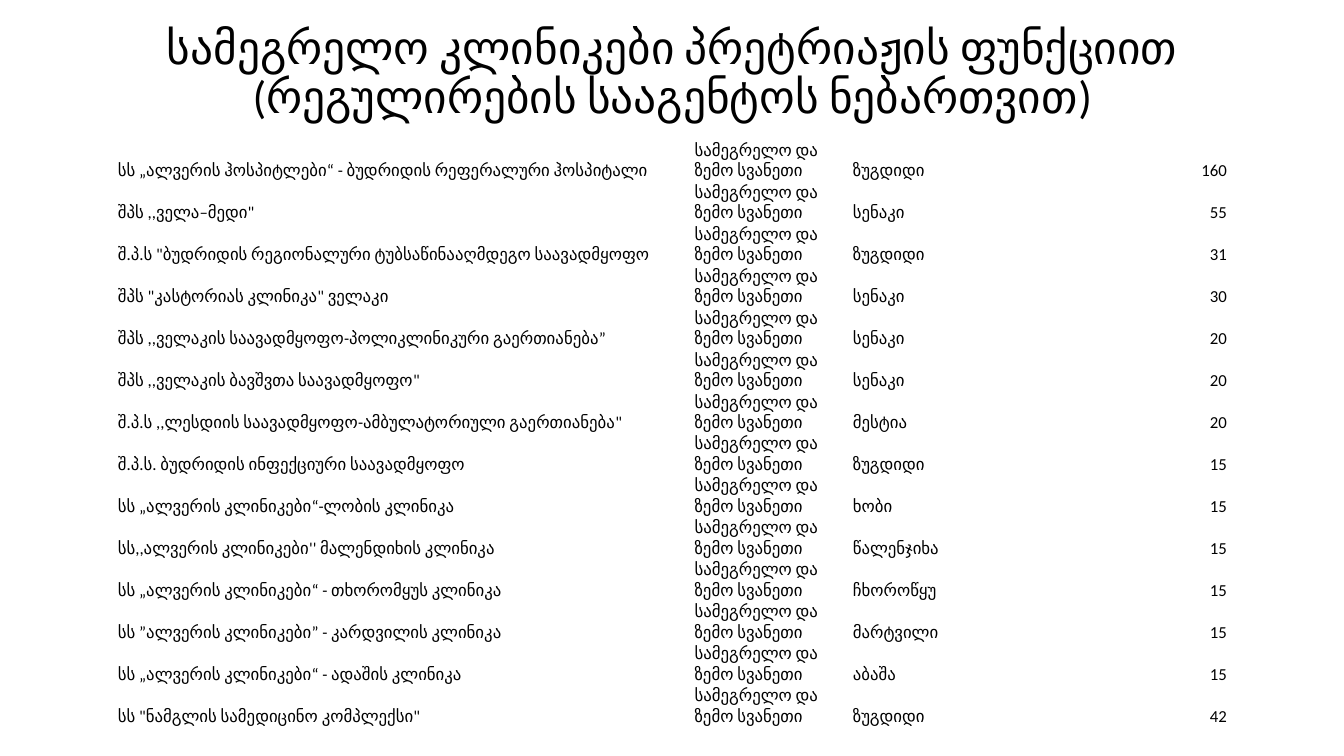
import pptx
import pptx.util
import pptx.dml.color
import pptx.enum.text
from pptx.util import Inches

COLORS = {"text": "000000", "background": "FFFFFF"}
FONT = "Calibri"
ALIGN = pptx.enum.text.PP_ALIGN
ANCHOR = pptx.enum.text.MSO_ANCHOR

TITLE = "სამეგრელო კლინიკები პრეტრიაჟის ფუნქციით (რეგულირების სააგენტოს ნებართვით)"
REGION = "სამეგრელო და ზემო სვანეთი"

# Clinic, town, number of beds
CLINICS = [
    ("სს „ალვერის ჰოსპიტლები“ - ბუდრიდის რეფერალური ჰოსპიტალი", "ზუგდიდი", 160),
    ("შპს ,,ველა–მედი\"", "სენაკი", 55),
    ("შ.პ.ს \"ბუდრიდის რეგიონალური ტუბსაწინააღმდეგო საავადმყოფო", "ზუგდიდი", 31),
    ("შპს \"კასტორიას კლინიკა\" ველაკი", "სენაკი", 30),
    ("შპს ,,ველაკის საავადმყოფო-პოლიკლინიკური გაერთიანება”", "სენაკი", 20),
    ("შპს ,,ველაკის ბავშვთა საავადმყოფო\"", "სენაკი", 20),
    ("შ.პ.ს ,,ლესდიის საავადმყოფო-ამბულატორიული გაერთიანება\"", "მესტია", 20),
    ("შ.პ.ს. ბუდრიდის ინფექციური საავადმყოფო", "ზუგდიდი", 15),
    ("სს „ალვერის კლინიკები“-ლობის კლინიკა", "ხობი", 15),
    ("სს,,ალვერის კლინიკები'' მალენდიხის კლინიკა", "წალენჯიხა", 15),
    ("სს „ალვერის კლინიკები“ - თხორომყუს კლინიკა", "ჩხოროწყუ", 15),
    ("სს ”ალვერის კლინიკები” - კარდვილის კლინიკა", "მარტვილი", 15),
    ("სს „ალვერის კლინიკები“ - ადაშის კლინიკა", "აბაშა", 15),
    ("სს \"ნამგლის სამედიცინო კომპლექსი\"", "ზუგდიდი", 42),
]
COLUMN_WIDTHS = [5.72, 1.57, 2.15, 1.58]
TALL_ROWS = (0, 2, 4, 6)


def format_paragraph(paragraph, size, align):
    paragraph.alignment = align
    paragraph.font.name = FONT
    paragraph.font.size = pptx.util.Pt(size)
    paragraph.font.bold = False
    paragraph.font.color.rgb = pptx.dml.color.RGBColor.from_string(COLORS["text"])


def set_title(slide):
    title = slide.shapes.title
    title.left, title.top = Inches(0.92), Inches(0.4)
    title.width, title.height = Inches(11.5), Inches(0.67)
    frame = title.text_frame
    frame.text = TITLE
    frame.word_wrap = True
    frame.auto_size = pptx.enum.text.MSO_AUTO_SIZE.NONE
    frame.vertical_anchor = ANCHOR.MIDDLE
    heading = frame.paragraphs[0]
    format_paragraph(heading, 32.4, ALIGN.CENTER)
    heading.line_spacing = 0.9


def fill_cell(cell, text, align):
    cell.text = text
    cell.fill.background()
    cell.vertical_anchor = ANCHOR.BOTTOM
    cell.margin_left = cell.margin_right = cell.margin_top = Inches(0.01)
    cell.margin_bottom = 0
    format_paragraph(cell.text_frame.paragraphs[0], 12, align)


def add_clinic_table(slide):
    table_frame = slide.shapes.add_table(
        len(CLINICS), len(COLUMN_WIDTHS),
        Inches(1.16), Inches(1.38), Inches(11.02), Inches(5.72))
    clinics = table_frame.table
    clinics.first_row = clinics.horz_banding = False

    for column, width in zip(clinics.columns, COLUMN_WIDTHS):
        column.width = Inches(width)

    for row_index, (clinic, town, beds) in enumerate(CLINICS):
        clinics.rows[row_index].height = Inches(0.34 if row_index in TALL_ROWS else 0.31)
        for column_index, text in enumerate((clinic, REGION, town, str(beds))):
            align = ALIGN.RIGHT if column_index == 3 else ALIGN.LEFT
            fill_cell(clinics.cell(row_index, column_index), text, align)
    table_frame.height = Inches(5.72)


def main():
    deck = pptx.Presentation()
    deck.slide_width, deck.slide_height = Inches(13.33), Inches(7.5)
    slide = deck.slides.add_slide(deck.slide_layouts[5])
    background = slide.background.fill
    background.solid()
    background.fore_color.rgb = pptx.dml.color.RGBColor.from_string(COLORS["background"])

    # Heading
    set_title(slide)
    # Clinics by town with bed counts
    add_clinic_table(slide)

    deck.save("out.pptx")


if __name__ == "__main__":
    main()
